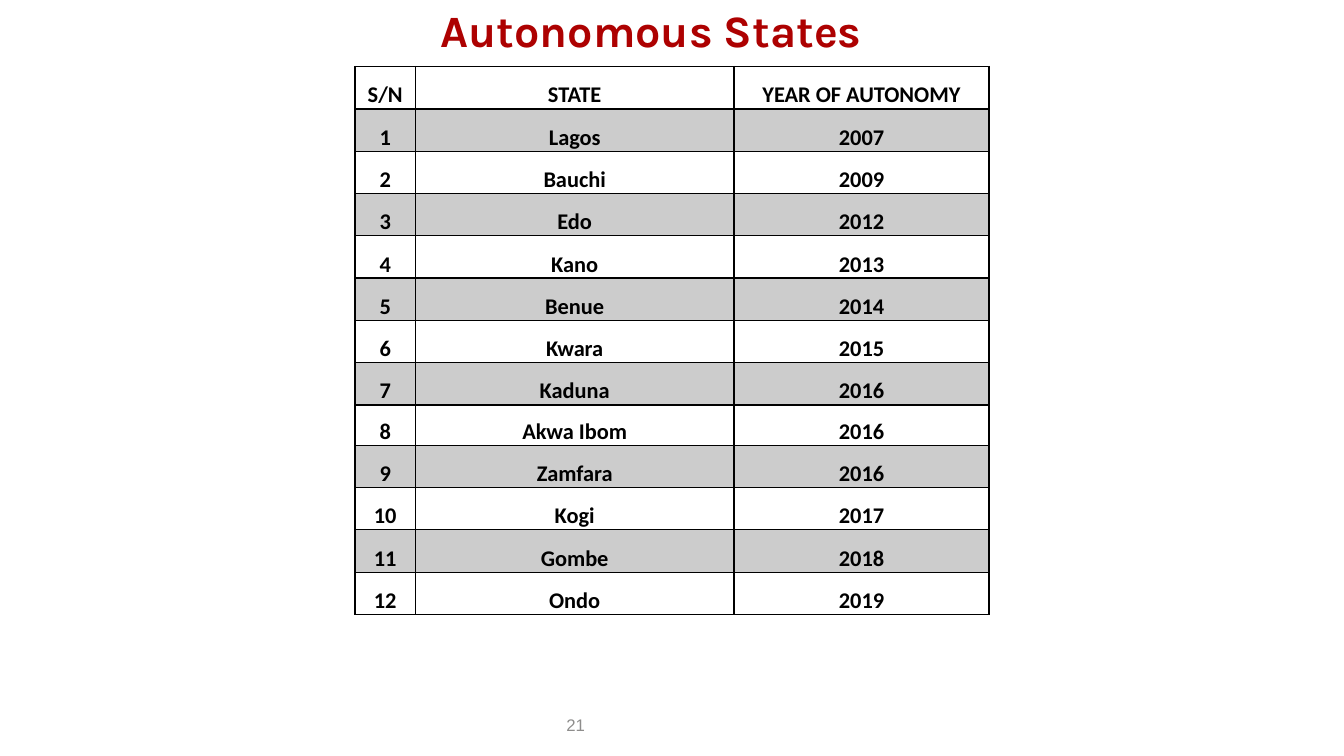
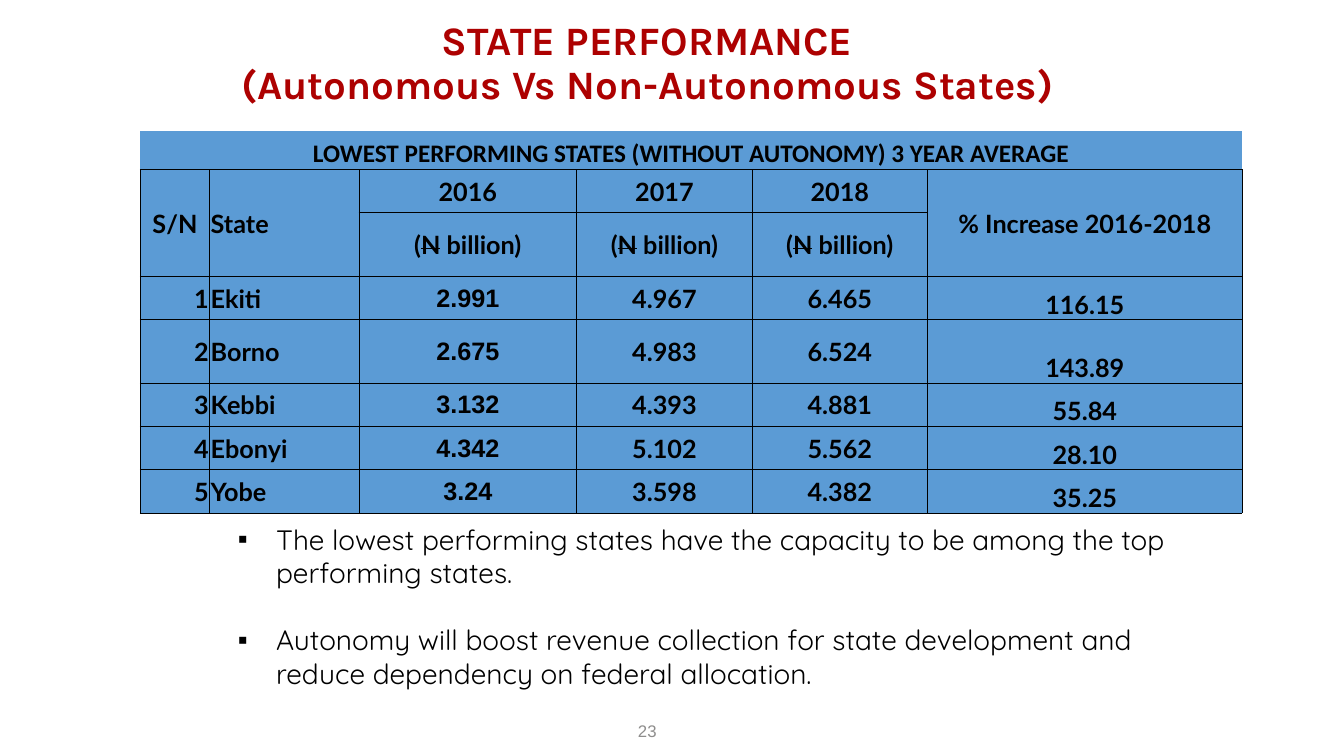
from lxml import etree
from pptx import Presentation
from pptx.dml.color import RGBColor
from pptx.enum.text import MSO_ANCHOR as Anchor, PP_ALIGN as Align
from pptx.oxml.ns import qn
from pptx.util import Pt

PX = 9144  # EMU per px, 100 px to the inch

RED = RGBColor(0xAD, 0x01, 0x01)
BLACK = RGBColor(0, 0, 0)
WHITE = RGBColor(0xFF, 0xFF, 0xFF)
BAND = RGBColor(0xCC, 0xCC, 0xCC)
BLUE = RGBColor(0x5B, 0x9B, 0xD5)
GREY = RGBColor(0x8E, 0x8D, 0x8C)

# Content
HEADS = ("S/N", "STATE", "YEAR OF AUTONOMY")
STATES = [
    ("Lagos", 2007), ("Bauchi", 2009), ("Edo", 2012), ("Kano", 2013),
    ("Benue", 2014), ("Kwara", 2015), ("Kaduna", 2016), ("Akwa Ibom", 2016),
    ("Zamfara", 2016), ("Kogi", 2017), ("Gombe", 2018), ("Ondo", 2019),
]
BANNER = "LOWEST PERFORMING STATES (WITHOUT AUTONOMY) 3 YEAR AVERAGE"
YEARS = ("S/N", "State", "2016", "2017", "2018", "% Increase 2016-2018")
UNIT = ("(", "N", " billion)")  # the N is struck through
LOWEST = [
    ("Ekiti", "2.991", "4.967", "6.465", "116.15"),
    ("Borno", "2.675", "4.983", "6.524", "143.89"),
    ("Kebbi", "3.132", "4.393", "4.881", "55.84"),
    ("Ebonyi", "4.342", "5.102", "5.562", "28.10"),
    ("Yobe", "3.24", "3.598", "4.382", "35.25"),
]
POINTS = [
    "The lowest performing states have the capacity to be among the top performing states.",
    "Autonomy will boost revenue collection for state development and reduce dependency on federal allocation.",
]


def px(*nums):
    return [n * PX for n in nums]


def style(para, font, size, color, bold=False, align=Align.CENTER):
    para.alignment = align
    for run in para.runs:
        run.font.name, run.font.size, run.font.bold = font, Pt(size), bold
        run.font.color.rgb = color


def add_page(deck, title, box, size, number, spot):
    """Slide with the shared title style and page number."""
    slide = deck.slides.add_slide(deck.slide_layouts[5])
    head = slide.shapes.title
    head.left, head.top, head.width, head.height = px(*box)
    frame = head.text_frame
    frame.text = title
    frame.word_wrap = True
    frame.vertical_anchor = Anchor.MIDDLE
    frame.paragraphs[0].line_spacing = 0.9
    style(frame.paragraphs[0], "Karla", size, RED, True)

    foot = slide.shapes.add_textbox(*px(*spot, 300, 40)).text_frame
    foot.text = number
    foot.word_wrap = True
    foot.vertical_anchor = Anchor.MIDDLE
    style(foot.paragraphs[0], "Arial", 12, GREY)
    return slide


def add_grid(slide, left, top, cols, rows):
    frame = slide.shapes.add_table(
        len(rows), len(cols), *px(left, top, sum(cols), sum(rows)))
    grid = frame.table
    grid.first_row = grid.horz_banding = False
    for col, wide in zip(grid.columns, cols):
        col.width = wide * PX
    for row, high in zip(grid.rows, rows):
        row.height = high * PX
    return grid


def edge(cell, **widths):
    """Border widths in points by side (L, R, T, B); 0 hides the side."""
    props = cell._tc.get_or_add_tcPr()
    for side in "LRTB":
        wide = widths[side]
        line = etree.SubElement(props, qn(f"a:ln{side}"), w=str(int(wide * 12700)))
        if wide:
            fill = etree.SubElement(line, qn("a:solidFill"))
            etree.SubElement(fill, qn("a:srgbClr"), val=str(BLACK))
        else:
            etree.SubElement(line, qn("a:noFill"))


def fill_cell(cell, text, color, font, size, align=Align.CENTER, anchor=Anchor.BOTTOM):
    cell.fill.solid()
    cell.fill.fore_color.rgb = color
    cell.margin_left = cell.margin_right = cell.margin_top = PX
    cell.margin_bottom = 0
    cell.vertical_anchor = anchor
    para = cell.text_frame.paragraphs[0]
    for part in text if isinstance(text, tuple) else (text,):
        run = para.add_run()
        run.text = part
        if part == "N":
            run._r.get_or_add_rPr().set("strike", "sngStrike")
    style(para, font, size, BLACK, True, align)


def add_states(deck):
    slide = add_page(deck, "Autonomous States", (72, 0, 1148, 66), 32, "21", (421, 699))
    rows = [HEADS] + [(str(n), name, str(year))
                      for n, (name, year) in enumerate(STATES, 1)]
    highs = [40 if row[0] == "8" else 42 for row in rows]
    grid = add_grid(slide, 352, 66, (60, 316, 253), highs)
    for r, row in enumerate(rows):
        for c, text in enumerate(row):
            cell = grid.cell(r, c)
            edge(cell, L=1, R=1, T=2 if r == 1 else 1, B=1 if r else 2)
            fill_cell(cell, text, BAND if r % 2 else WHITE, "Calibri", 16)


def add_lowest(deck):
    slide = add_page(deck, "STATE PERFORMANCE\v(Autonomous Vs Non-Autonomous States)",
                     (100, 30, 1084, 68), 28.8, "23", (492, 705))

    # Bullets
    frame = slide.shapes.add_textbox(*px(226, 513, 958, 190)).text_frame
    frame.word_wrap = True
    frame.text = "\n".join(POINTS)
    for n, para in enumerate(frame.paragraphs):
        style(para, "Quicksand", 20, BLACK, align=Align.LEFT)
        para.space_before = Pt(24 * n)
        props = para._p.get_or_add_pPr()
        props.set("marL", str(38 * PX))
        props.set("indent", str(-38 * PX))
        etree.SubElement(props, qn("a:buFont"), typeface="Arial")
        etree.SubElement(props, qn("a:buChar"), char="▪")

    # Table
    rows = [(BANNER,) + ("",) * 5, YEARS, ("", "", UNIT, UNIT, UNIT, "")]
    rows += [(str(n), *row) for n, row in enumerate(LOWEST, 1)]
    highs = (38, 43, 63, 43, 63, 43, 43, 43)
    grid = add_grid(slide, 139, 130, (69, 148, 216, 174, 174, 312), highs)
    grid.cell(0, 0).merge(grid.cell(0, 5))
    for c in (0, 1, 5):
        grid.cell(1, c).merge(grid.cell(2, c))
    for r, row in enumerate(rows):
        for c, text in enumerate(row):
            cell = grid.cell(r, c)
            side = 0.5 if r else 0
            edge(cell, L=side, R=side, T=side, B=0.5)
            if cell.is_spanned:
                continue
            data = r > 2
            font = "Calibri" if r == 0 else "Arial" if data and c == 2 else "Lato"
            align = Align.CENTER
            if c == 0 and data:
                align = Align.RIGHT
            elif c == 1:
                align = Align.LEFT
            low = r == 0 or (data and c == 5)
            fill_cell(cell, text, BLUE, font, 18, align,
                      Anchor.BOTTOM if low else Anchor.MIDDLE)


def main():
    deck = Presentation()
    deck.slide_width, deck.slide_height = px(1333, 750)
    add_states(deck)
    add_lowest(deck)
    deck.save("out.pptx")


if __name__ == "__main__":
    main()
